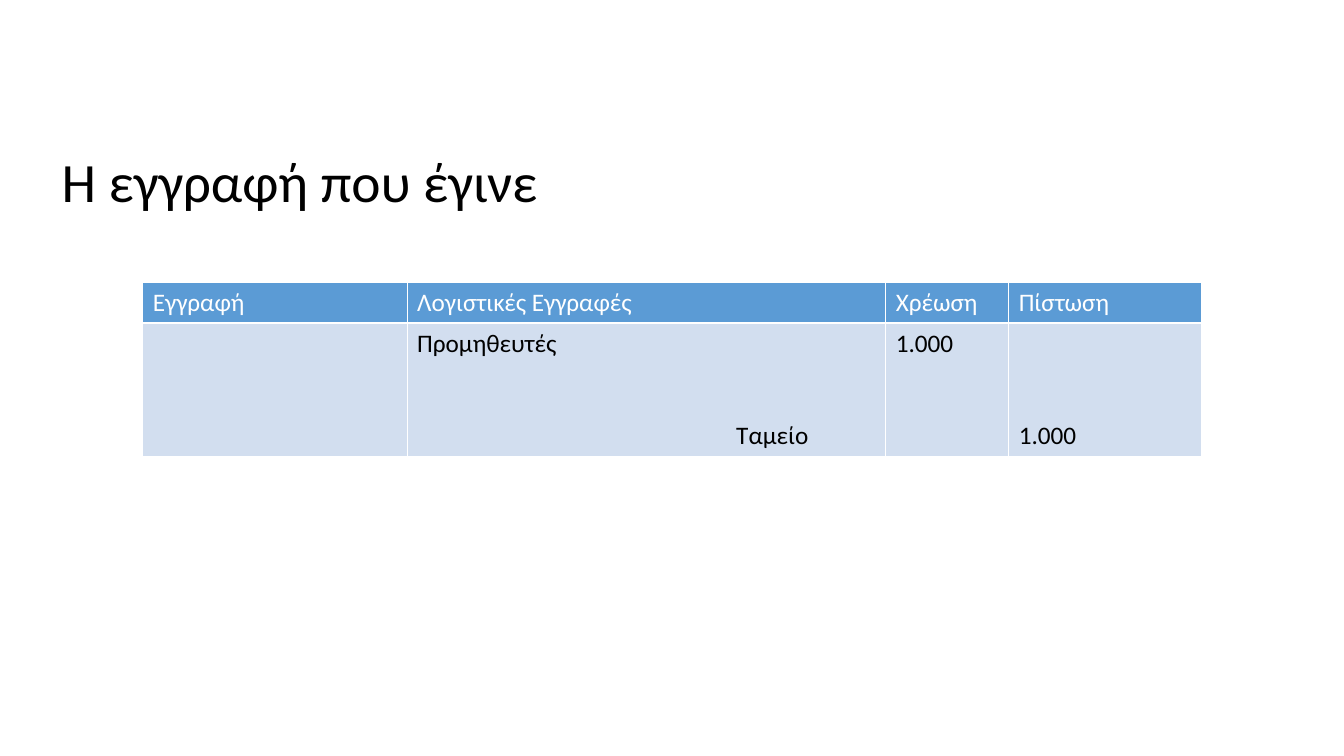
from dataclasses import dataclass

from lxml import etree
from pptx import Presentation
from pptx.dml.color import RGBColor
from pptx.enum.text import MSO_ANCHOR, MSO_AUTO_SIZE, PP_ALIGN
from pptx.oxml.ns import qn
from pptx.util import Cm, Pt

LEFT = PP_ALIGN.LEFT
TOP, BOTTOM = MSO_ANCHOR.TOP, MSO_ANCHOR.BOTTOM
NO_FIT = MSO_AUTO_SIZE.NONE


@dataclass(frozen=True)
class Theme:
    font: str = "Calibri"
    ink: str = "000000"
    white: str = "FFFFFF"
    head: str = "5B9BD5"
    body: str = "D2DEEF"
    title: float = 39.6
    text: float = 18
    rule: float = 1


def apply(target, values):
    for name, value in values.items():
        setattr(target, name, value)


class Page:
    def __init__(self, deck, theme):
        self.theme = theme
        self.slide = deck.slides.add_slide(deck.slide_layouts[5])

    def style(self, para, size, color):
        apply(para.font, {"name": self.theme.font, "size": Pt(size), "bold": False})
        para.font.color.rgb = RGBColor.from_string(color)
        para.alignment = LEFT

    def title(self, text, left, top, width, height):
        shape = self.slide.shapes.title
        apply(shape, {"left": Cm(left), "top": Cm(top),
                      "width": Cm(width), "height": Cm(height)})
        frame = shape.text_frame
        frame.text = text
        apply(frame, {"word_wrap": True, "auto_size": NO_FIT,
                      "vertical_anchor": BOTTOM, "margin_bottom": Cm(0.28)})
        para = frame.paragraphs[0]
        para.line_spacing = 0.9
        self.style(para, self.theme.title, self.theme.ink)

    def border(self, cell):
        props = cell._tc.get_or_add_tcPr()
        for spot, side in enumerate(("lnL", "lnR", "lnT", "lnB")):
            line = etree.Element(qn(f"a:{side}"), w=str(Pt(self.theme.rule)))
            fill = etree.SubElement(line, qn("a:solidFill"))
            etree.SubElement(fill, qn("a:srgbClr"), val=self.theme.white)
            props.insert(spot, line)

    def table(self, rows, left, top, widths, heights):
        frame = self.slide.shapes.add_table(
            len(rows), len(widths), Cm(left), Cm(top),
            Cm(sum(widths)), Cm(sum(heights)))
        grid = frame.table
        for col, width in zip(grid.columns, widths):
            col.width = Cm(width)
        for row, height in zip(grid.rows, heights):
            row.height = Cm(height)
        for r, row in enumerate(rows):
            fill, color = ((self.theme.body, self.theme.ink) if r
                           else (self.theme.head, self.theme.white))
            for c, text in enumerate(row):
                cell = grid.cell(r, c)
                cell.text = text
                cell.vertical_anchor = TOP
                cell.fill.solid()
                cell.fill.fore_color.rgb = RGBColor.from_string(fill)
                self.border(cell)
                for para in cell.text_frame.paragraphs:
                    self.style(para, self.theme.text, color)
        return grid


def main():
    deck = Presentation()
    apply(deck, {"slide_width": Cm(33.87), "slide_height": Cm(19.05)})
    page = Page(deck, Theme())
    page.title("Η εγγραφή που έγινε", 1.3, 0.53, 31.19, 5.16)
    rows = [
        ["Εγγραφή", "Λογιστικές Εγγραφές", "Χρέωση", "Πίστωση"],
        ["", "Προμηθευτές\nΤαμείο", "1.000", "1.000"],
    ]
    grid = page.table(rows, 3.6, 7.11, [6.66, 12.06, 3.1, 4.86], [1.03, 3.34])

    # The credited account sits lower and further in than the debited one.
    credit = grid.cell(1, 1).text_frame.paragraphs[1]
    credit.space_before = Pt(44)
    credit._p.get_or_add_pPr().set("marL", str(Cm(8.04)))
    grid.cell(1, 3).vertical_anchor = BOTTOM
    deck.save("out.pptx")


if __name__ == "__main__":
    main()
